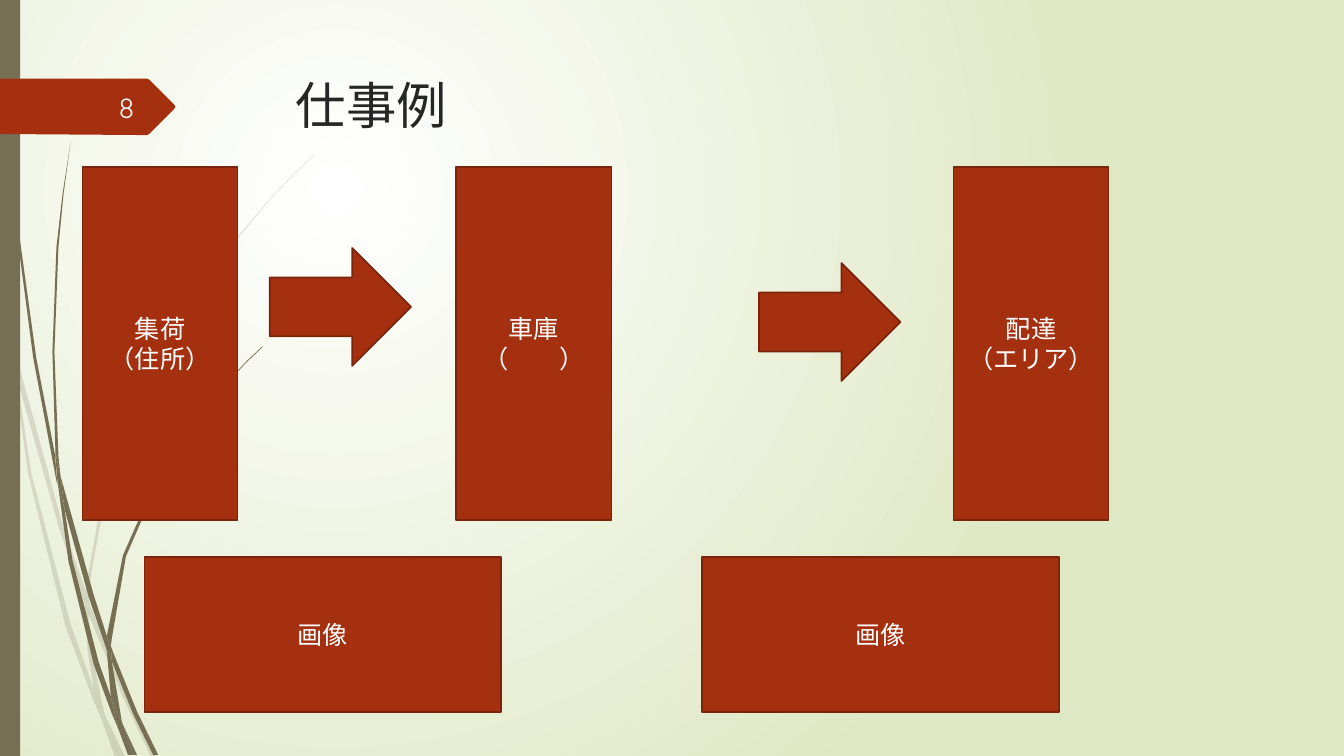
from lxml.etree import SubElement
from pptx import Presentation
from pptx.dml.color import RGBColor
from pptx.enum.shapes import MSO_SHAPE as Preset
from pptx.enum.text import MSO_ANCHOR as Anchor, MSO_AUTO_SIZE as AutoSize, PP_ALIGN as Align
from pptx.oxml.ns import qn
from pptx.util import Cm, Pt

RUST = RGBColor(0xA5, 0x30, 0x10)
RUST_EDGE = RGBColor(0x7A, 0x24, 0x0C)
OLIVE = RGBColor(0x76, 0x6F, 0x54)
PALE_GREEN = RGBColor(0xDF, 0xE8, 0xC4)
WHITE = RGBColor(0xFF, 0xFF, 0xFF)
NUMBER_WHITE = RGBColor(0xFE, 0xFF, 0xFF)
INK = RGBColor(0x26, 0x26, 0x26)
FONT = "Quicksand"
SLIDE_WIDTH, SLIDE_HEIGHT = 33.87, 19.05
GRID = Cm(2.54) / 100

PALE_BLADES = [
    [(11, 350), (9, 322), (0, 282), (0, 299), (10, 344)],
    [(58, 522), (84, 599), (85, 586), (62, 520), (14, 345), (17, 376)],
    [(92, 607), (88, 596), (88, 610), (123, 694), (150, 751), (155, 751), (127, 692)],
    [(119, 751), (124, 751), (105, 711)],
    [(93, 683), (70, 619), (31, 469), (17, 376), (11, 350), (28, 470), (65, 621),
     (92, 693), (101, 714), (99, 707)],
    [(84, 599), (87, 646), (93, 683), (96, 692), (105, 711), (103, 706), (91, 646),
     (88, 610), (88, 608)],
    [(88, 584), (110, 462), (160, 349), (229, 245), (268, 198), (290, 175), (312, 154),
     (312, 153), (289, 175), (268, 197), (228, 244), (158, 348), (107, 461), (85, 584),
     (85, 586), (88, 596)],
    [(101, 714), (114, 751), (119, 751)],
    [(88, 608), (88, 610), (88, 596), (85, 586), (84, 599)],
    [(96, 692), (93, 683), (99, 707), (101, 714), (119, 751), (105, 711)],
]
DARK_BLADES = [
    [(7, 110), (17, 233), (33, 355), (56, 477), (57, 481), (55, 457), (55, 453), (36, 355),
     (19, 232), (8, 109), (5, 48), (4, 0), (3, 0), (4, 48)],
    [(88, 592), (106, 645), (106, 633), (106, 631), (93, 590), (60, 472), (64, 505)],
    [(113, 649), (110, 641), (111, 656), (132, 708), (152, 749), (157, 749), (136, 706)],
    [(110, 691), (98, 657), (72, 556), (64, 505), (57, 477), (68, 557), (93, 659),
     (111, 708), (117, 722), (116, 717)],
    [(60, 472), (58, 453), (54, 349), (58, 245), (63, 193), (70, 141), (62, 193), (56, 245),
     (52, 349), (55, 449)],
    [(133, 749), (136, 749), (122, 719)],
    [(57, 477), (64, 505), (60, 472), (55, 449), (55, 453)],
    [(111, 633), (125, 552), (158, 476), (205, 406), (231, 374), (245, 359), (261, 344),
     (260, 344), (245, 358), (231, 373), (204, 405), (156, 474), (122, 551), (106, 631),
     (110, 641)],
    [(117, 722), (127, 749), (131, 749)],
    [(106, 645), (110, 691), (116, 706), (122, 719), (121, 716), (111, 656), (109, 651)],
    [(106, 645), (109, 651), (111, 656), (110, 641), (106, 631), (106, 633)],
    [(116, 706), (110, 691), (116, 717), (117, 722), (130, 749), (133, 749), (122, 719)],
]
PAGE_TAG = [(0, 78), (146, 78), (148, 79), (173, 104), (174, 106), (173, 108), (148, 133),
            (146, 134), (136, 134), (0, 133)]


def set_values(target, values):
    for name, value in values.items():
        setattr(target, name, value)


def paint(shape, color, edge=None):
    shape.shadow.inherit = False
    shape.fill.solid()
    shape.fill.fore_color.rgb = color
    if edge is None:
        shape.line.fill.background()
    else:
        shape.line.color.rgb = edge
        shape.line.width = Pt(1.25)


def add_outline(slide, corners, color, opacity=100):
    builder = slide.shapes.build_freeform(*corners[0], scale=GRID)
    builder.add_line_segments(corners[1:], close=True)
    outline = builder.convert_to_shape()
    paint(outline, color)
    if opacity < 100:
        tint = outline.fill._xPr.find(".//" + qn("a:srgbClr"))
        SubElement(tint, qn("a:alpha"), val=str(opacity * 1000))


def add_preset(slide, preset, box, color, edge=None):
    shape = slide.shapes.add_shape(preset, *map(Cm, box))
    paint(shape, color, edge)
    return shape


def write(shape, lines, size, color, align, anchor):
    frame = shape.text_frame
    set_values(frame, {"text": "\n".join(lines), "word_wrap": True,
                       "auto_size": AutoSize.NONE, "vertical_anchor": anchor})
    for paragraph in frame.paragraphs:
        paragraph.alignment = align
        font = paragraph.runs[0].font
        set_values(font, {"name": FONT, "size": Pt(size)})
        font.color.rgb = color


def add_card(slide, box, lines):
    card = add_preset(slide, Preset.RECTANGLE, box, RUST, RUST_EDGE)
    write(card, lines, 18, WHITE, Align.CENTER, Anchor.MIDDLE)


def set_background(slide):
    fill = slide.background.fill
    fill.gradient()
    for stop, position, color in zip(fill.gradient_stops, (0, 1), (WHITE, PALE_GREEN)):
        stop.position = position
        stop.color.rgb = color
    gradient = slide._element.find(".//" + qn("a:gradFill"))
    gradient.remove(gradient.find(qn("a:lin")))
    glow = SubElement(gradient, qn("a:path"), path="circle")
    SubElement(glow, qn("a:fillToRect"), l="50000", t="50000", r="100000", b="100000")


def add_decoration(slide):
    for blades, opacity in ((PALE_BLADES, 20), (DARK_BLADES, 100)):
        for blade in blades:
            add_outline(slide, blade, OLIVE, opacity)
    add_preset(slide, Preset.RECTANGLE, (0, 0, 0.51, SLIDE_HEIGHT), OLIVE)


def add_page_number(slide, number):
    label = slide.shapes.add_textbox(*map(Cm, (1.48, 2.2, 2.16, 1.02)))
    write(label, [number], 20, NUMBER_WHITE, Align.RIGHT, Anchor.MIDDLE)


def add_title(slide, text):
    title = slide.shapes.title
    set_values(title, {"left": Cm(7.2), "top": Cm(1.73),
                       "width": Cm(24.77), "height": Cm(3.56)})
    write(title, [text], 36, INK, Align.LEFT, Anchor.TOP)


def main():
    deck = Presentation()
    set_values(deck, {"slide_width": Cm(SLIDE_WIDTH), "slide_height": Cm(SLIDE_HEIGHT)})
    slide = deck.slides.add_slide(deck.slide_layouts[5])
    set_background(slide)
    add_decoration(slide)
    add_outline(slide, PAGE_TAG, RUST)
    add_title(slide, "仕事例")
    add_page_number(slide, "8")
    for left, stage, place in ((2.08, "集荷", "（住所）"), (11.5, "車庫", "（　　）"),
                               (24.03, "配達", "（エリア）")):
        add_card(slide, (left, 4.2, 3.91, 8.91), [stage, place])
    for left, top in ((6.8, 6.25), (19.13, 6.63)):
        add_preset(slide, Preset.RIGHT_ARROW, (left, top, 3.56, 2.97), RUST, RUST_EDGE)
    for left in (3.64, 17.7):
        add_card(slide, (left, 14.03, 8.99, 3.91), ["画像"])
    deck.save("out.pptx")


if __name__ == "__main__":
    main()
